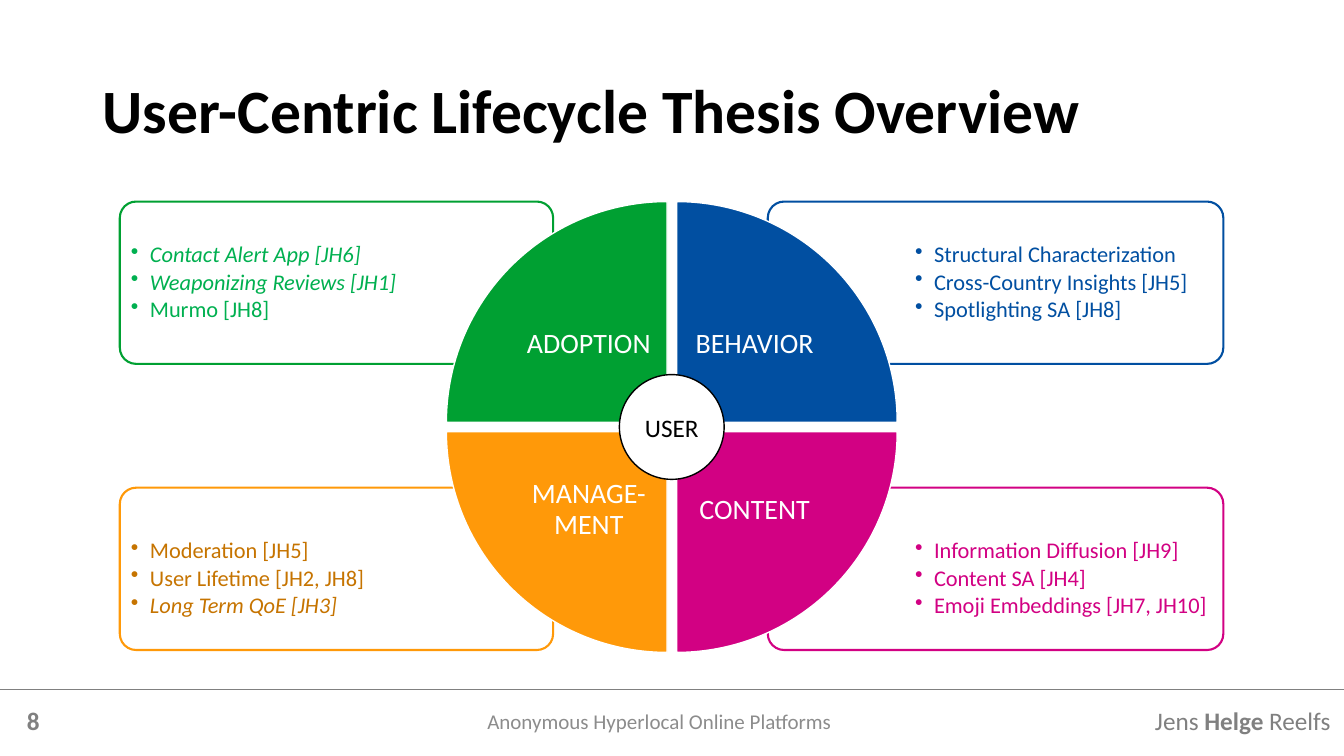
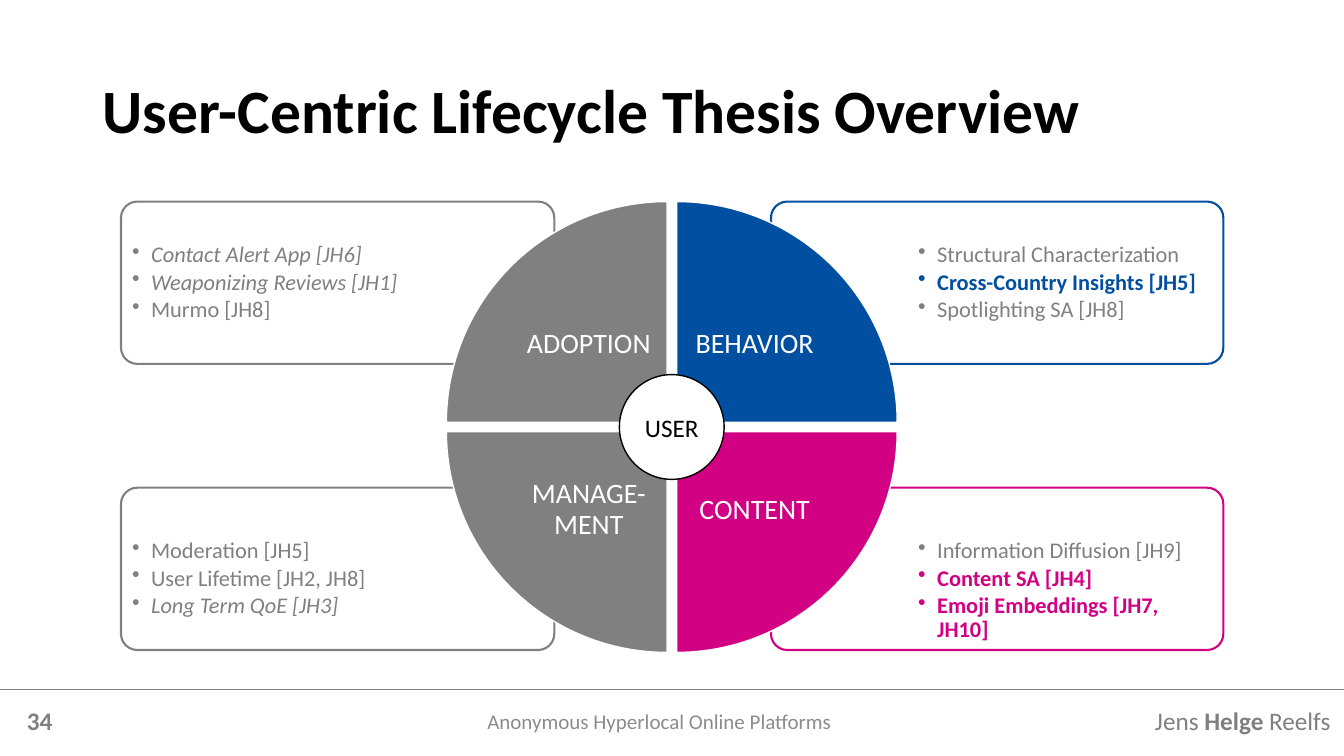
from dataclasses import dataclass
from lxml.etree import SubElement as Sub
from pptx import Presentation
from pptx.dml.color import RGBColor
from pptx.enum.shapes import MSO_CONNECTOR as Link, MSO_SHAPE as Shape
from pptx.enum.text import MSO_ANCHOR as Anchor, MSO_AUTO_SIZE as Auto, PP_ALIGN as Align
from pptx.oxml.ns import qn
from pptx.util import Cm, Pt

BLACK = RGBColor(0x00, 0x00, 0x00)
WHITE = RGBColor(0xFF, 0xFF, 0xFF)
GREY = RGBColor(0x80, 0x80, 0x80)
SILVER = RGBColor(0x8C, 0x8C, 0x8C)
GREEN = RGBColor(0x00, 0xA0, 0x32)
LEAF = RGBColor(0x00, 0xB0, 0x50)
BLUE = RGBColor(0x01, 0x4F, 0xA1)
PINK = RGBColor(0xD2, 0x01, 0x83)
AMBER = RGBColor(0xFF, 0x99, 0x09)
BROWN = RGBColor(0xC6, 0x74, 0x00)

WIDE, HIGH = 33.87, 19.05
MID_X, MID_Y = 16.93, 10.76
GAP, WEDGE, LABEL, HUB = 0.12, 5.56, 3.94, 2.64
BOX_W, BOX_H, EDGE = 10.92, 4.09, 30.83
BOX_TOP = 5.08, 12.29
LIST_TOP = 5.95, 13.41
FOOT_Y, FOOT_H = 17.65, 1.02


@dataclass
class Topic:
    name: str
    right: bool
    low: bool
    turn: int
    fill: RGBColor
    ink: RGBColor
    items: tuple
    slant: tuple = ()


TOPICS = (
    Topic("CONTENT", True, True, 180, PINK, PINK,
          ("Information Diffusion [JH9]", "Content SA [JH4]", "Emoji Embeddings [JH7, JH10]")),
    Topic("MANAGE-MENT", False, True, 270, AMBER, BROWN,
          ("Moderation [JH5]", "User Lifetime [JH2, JH8]", "Long Term QoE [JH3]"),
          ("Long Term QoE [JH3]",)),
    Topic("BEHAVIOR", True, False, 90, BLUE, BLUE,
          ("Structural Characterization", "Cross-Country Insights [JH5]", "Spotlighting SA [JH8]")),
    Topic("ADOPTION", False, False, 0, GREEN, LEAF,
          ("Contact Alert App [JH6]", "Weaponizing Reviews [JH1]", "Murmo [JH8]"),
          ("Contact Alert App [JH6]", "Weaponizing Reviews [JH1]")),
)
FOCUS = ("Cross-Country Insights [JH5]", "Content SA [JH4]", "Emoji Embeddings [JH7, JH10]")


class Deck:
    face = "Calibri"

    def __init__(self):
        self.prs = Presentation()
        self.prs.slide_width, self.prs.slide_height = Cm(WIDE), Cm(HIGH)

    def page(self, title, number):
        self.slide = self.prs.slides.add_slide(self.prs.slide_layouts[5])
        head = self.slide.shapes.title
        head.left, head.top, head.width, head.height = Cm(2.33), Cm(1.02), Cm(29.21), Cm(3.68)
        frame = head.text_frame
        frame.auto_size, frame.vertical_anchor = Auto.NONE, Anchor.MIDDLE
        para = frame.paragraphs[0]
        para.text, para.alignment, para.line_spacing = title, Align.LEFT, 0.9
        self.font(para, 44, BLACK, bold=True)
        self.foot(number)

    def foot(self, number):
        rule = self.slide.shapes.add_connector(Link.STRAIGHT, 0, Cm(17.37), Cm(WIDE), Cm(17.37))
        rule.line.color.rgb, rule.line.width = GREY, Pt(0.75)
        Sub(rule._element.spPr, qn("a:effectLst"))
        self.text(number, 0.43, FOOT_Y, 7.62, FOOT_H, 18, GREY, bold=True)
        self.text("Anonymous Hyperlocal Online Platforms", 5.54, FOOT_Y, 22.15, FOOT_H,
                  15, SILVER, Align.CENTER, Anchor.MIDDLE)
        para = self.text("", 25.8, FOOT_Y, 7.98, FOOT_H, 18, GREY, Align.RIGHT)
        for part in ("Jens ", "Helge", " Reelfs"):
            run = para.add_run()
            run.text = part
            run.font.bold = part == "Helge"

    def font(self, para, size, ink, bold=False, slant=False):
        font = para.font
        font.name, font.size, font.bold, font.italic = self.face, Pt(size), bold, slant
        font.color.rgb = ink

    def frame(self, x, y, w, h, inset=None):
        box = self.slide.shapes.add_textbox(Cm(x), Cm(y), Cm(w), Cm(h))
        frame = box.text_frame
        frame.word_wrap = True
        if inset is not None:
            frame.margin_left = frame.margin_right = Cm(inset)
            frame.margin_top = frame.margin_bottom = Cm(inset)
        return frame

    def text(self, words, x, y, w, h, size, ink, align=Align.LEFT, anchor=Anchor.TOP,
             bold=False, inset=None, space=None):
        frame = self.frame(x, y, w, h, inset)
        frame.vertical_anchor = anchor
        para = frame.paragraphs[0]
        if words:
            para.text = words
        para.alignment, para.line_spacing = align, space
        self.font(para, size, ink, bold)
        return para

    def shape(self, kind, x, y, w, h, fill, line, width):
        form = self.slide.shapes.add_shape(kind, Cm(x), Cm(y), Cm(w), Cm(h))
        form.shadow.inherit = False
        form.fill.solid()
        form.fill.fore_color.rgb = fill
        form.line.color.rgb, form.line.width = line, Pt(width)
        return form

    def list(self, topic, x, y, w, focus):
        frame = self.frame(x, y, w, 2.9, 0.18)
        for spot, item in enumerate(topic.items):
            para = frame.add_paragraph() if spot else frame.paragraphs[0]
            para.text, para.level = item, 1
            para.line_spacing, para.space_after = 0.9, Pt(2.4)
            props = para._p.get_or_add_pPr()
            props.set("marL", str(Cm(0.48)))
            props.set("indent", str(-Cm(0.48)))
            Sub(props, qn("a:buChar")).set("char", "•")
            lit = item in focus
            ink = topic.ink if lit or not focus else GREY
            self.font(para, 16, ink, lit, item in topic.slant)

    def panel(self, topic, left, right, focus):
        x, w = (right, EDGE - right) if topic.right else (left, BOX_W)
        box = self.shape(Shape.ROUNDED_RECTANGLE, x, BOX_TOP[topic.low], w, BOX_H,
                         WHITE, self.tint(topic, focus), 1.5)
        box.adjustments[0] = 0.1
        tone = box._element.spPr.find(qn("a:solidFill"))[0]
        Sub(tone, qn("a:alpha")).set("val", "90000")
        start = x + (3.53 if topic.right else 0.1)
        wide = EDGE - 0.09 - start if topic.right else 7.47
        self.list(topic, start, LIST_TOP[topic.low], wide, focus)

    def tint(self, topic, focus):
        return topic.fill if not focus or set(focus) & set(topic.items) else GREY

    def wedge(self, topic, focus):
        def place(size):
            return (MID_X + GAP if topic.right else MID_X - GAP - size,
                    MID_Y + GAP if topic.low else MID_Y - GAP - size, size, size)

        pie = self.shape(Shape.PIE_WEDGE, *place(WEDGE), self.tint(topic, focus), WHITE, 1)
        pie.rotation = topic.turn
        self.text(topic.name, *place(LABEL), 20, WHITE, Align.CENTER, Anchor.MIDDLE,
                  inset=0.4, space=0.9)

    def hub(self, words):
        disc = self.shape(Shape.OVAL, MID_X - HUB / 2, MID_Y - HUB / 2, HUB, HUB, WHITE, BLACK, 1)
        frame = disc.text_frame
        frame.vertical_anchor = Anchor.MIDDLE
        para = frame.paragraphs[0]
        para.text, para.alignment = words, Align.CENTER
        self.font(para, 18, BLACK)

    def cycle(self, number, left, right, focus=()):
        self.page("User-Centric Lifecycle Thesis Overview", number)
        for topic in TOPICS:
            self.panel(topic, left, right, focus)
        for topic in TOPICS:
            self.wedge(topic, focus)
        self.hub("USER")


def main():
    deck = Deck()
    deck.cycle("8", 3.02, 19.35)
    deck.cycle("34", 3.05, 19.43, FOCUS)
    deck.prs.save("out.pptx")


if __name__ == "__main__":
    main()
